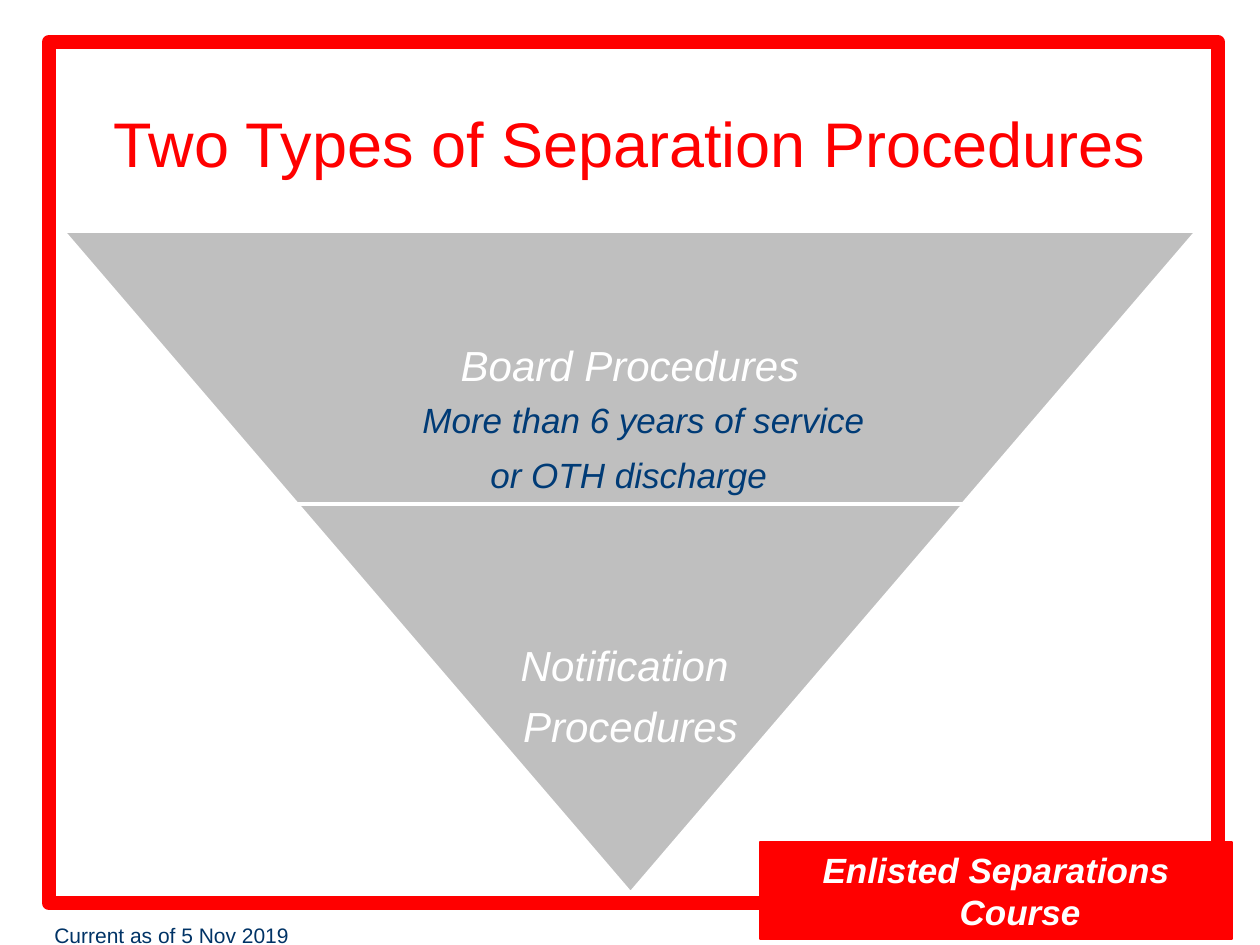
import pptx
import pptx.util
import pptx.dml.color
import pptx.enum.shapes
import pptx.enum.text

RGBColor = pptx.dml.color.RGBColor
Pt = pptx.util.Pt
SHAPE = pptx.enum.shapes.MSO_SHAPE
ALIGN = pptx.enum.text.PP_ALIGN
ANCHOR = pptx.enum.text.MSO_ANCHOR

RED = RGBColor(0xFF, 0x00, 0x00)
WHITE = RGBColor(0xFF, 0xFF, 0xFF)
GREY = RGBColor(0xBF, 0xBF, 0xBF)
NAVY = RGBColor(0x00, 0x33, 0x66)
BLUE = RGBColor(0x00, 0x3B, 0x76)

PX_PER_INCH = 126
TAPER = 0.857


def px(length):
    return pptx.util.Emu(round(length * 914400 / PX_PER_INCH))


class SlideBuilder:
    font = "Arial"

    def __init__(self, slide):
        self.slide = slide

    def block(self, box, kind=SHAPE.RECTANGLE, fill=None, line=RED, width=0.75):
        shape = self.slide.shapes.add_shape(kind, *map(px, box))
        shape.shadow.inherit = False
        if fill is None:
            shape.fill.background()
        else:
            shape.fill.solid()
            shape.fill.fore_color.rgb = fill
        shape.line.color.rgb = line
        shape.line.width = Pt(width)
        return shape

    def funnel_stage(self, box):
        stage = self.block(box, SHAPE.TRAPEZOID, GREY, WHITE, 2)
        stage.adjustments[0] = TAPER
        stage.rotation = 180

    def text(self, box, lines, size, color, **style):
        label = self.slide.shapes.add_textbox(*map(px, box))
        self.set_lines(label.text_frame, lines, size, color, **style)

    def set_lines(self, frame, lines, size, color, align=ALIGN.LEFT, anchor=ANCHOR.TOP,
                  bold=False, italic=False, wrap=True, inset=None, spacing=1.0,
                  before=0, after=0, hanging=0, indents=()):
        """Fill a text frame; indents gives the left margin of each line in px."""
        frame.word_wrap = wrap
        frame.vertical_anchor = anchor
        if inset is not None:
            frame.margin_left = frame.margin_right = px(inset)
            frame.margin_top = frame.margin_bottom = px(inset)
        for i, line in enumerate(lines):
            paragraph = frame.paragraphs[0] if i == 0 else frame.add_paragraph()
            paragraph.text = line
            paragraph.alignment = align
            paragraph.line_spacing = spacing
            paragraph.space_before = Pt(before)
            paragraph.space_after = Pt(after)
            paragraph.font.name = self.font
            paragraph.font.size = Pt(size)
            paragraph.font.bold = bold
            paragraph.font.italic = italic
            paragraph.font.color.rgb = color
            left = indents[i] if indents else hanging
            if left:
                properties = paragraph._p.get_or_add_pPr()
                properties.set("marL", str(px(left)))
                properties.set("indent", str(-px(hanging)))


def main():
    deck = pptx.Presentation()
    deck.slide_width = px(10 * PX_PER_INCH)
    deck.slide_height = px(945)
    builder = SlideBuilder(deck.slides.add_slide(deck.slide_layouts[6]))

    builder.block((49, 42, 1169, 861), width=8)
    course = builder.block((760, 842, 472, 97), fill=RED)
    builder.set_lines(course.text_frame, ["Enlisted Separations Course"], 20, WHITE,
                      align=ALIGN.CENTER, bold=True, italic=True,
                      before=10, hanging=48)
    builder.text((42, 914, 262, 40), ["Current as of 5 Nov 2019"], 12, NAVY,
                 wrap=False, spacing=1.1, before=2, hanging=32)
    builder.text((63, 63, 1134, 158), ["Two Types of Separation Procedures"], 36, RED,
                 align=ALIGN.CENTER, anchor=ANCHOR.MIDDLE)

    board = (63, 231, 1134, 273)
    notification = (297, 504, 667, 388)
    stage_style = dict(align=ALIGN.CENTER, anchor=ANCHOR.MIDDLE, italic=True,
                       inset=4, spacing=0.9, after=9)
    for box, lines in ((board, ["Board Procedures"]),
                       (notification, ["Notification ", "Procedures"])):
        builder.funnel_stage(box)
        builder.text(box, lines, 24, WHITE, **stage_style)

    builder.text((410, 388, 480, 115),
                 ["More than 6 years of service", "or OTH discharge"], 20, BLUE,
                 italic=True, wrap=False, spacing=1.1, before=5, indents=(0, 68))

    deck.save("out.pptx")


if __name__ == "__main__":
    main()
